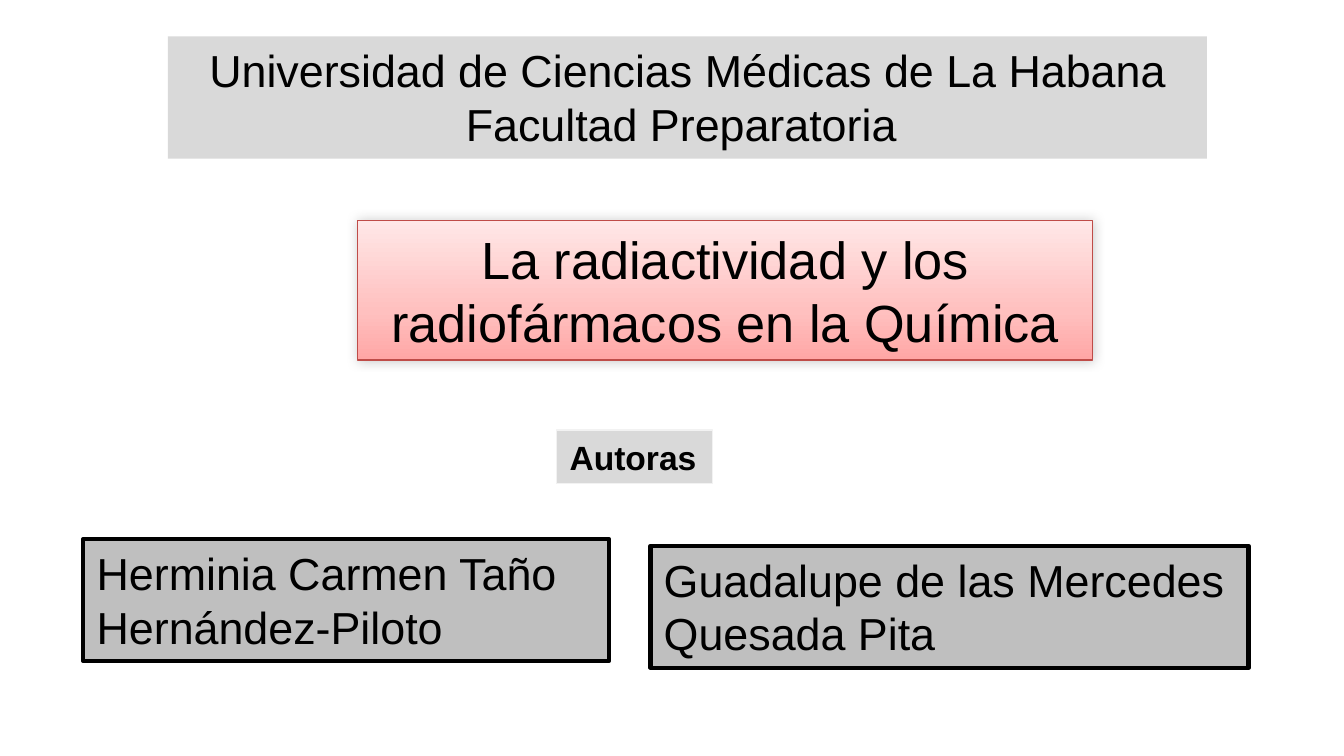
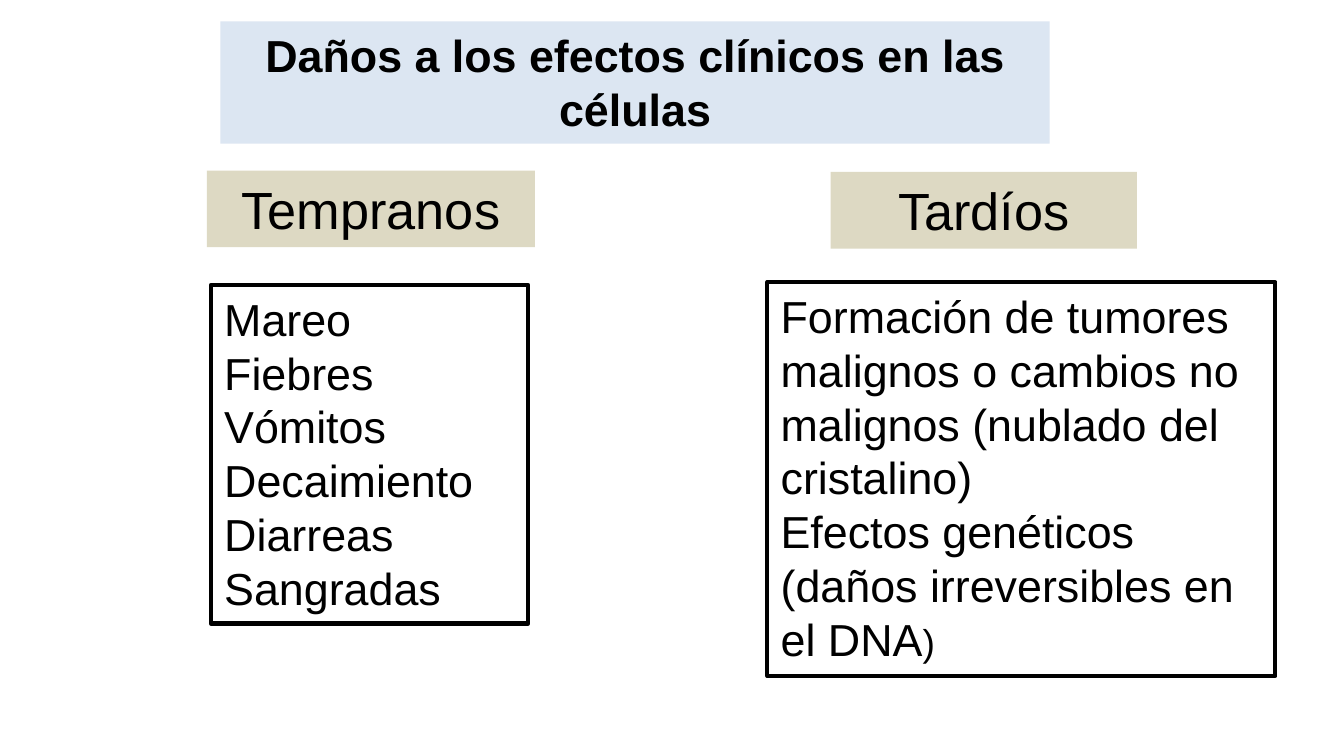
from copy import deepcopy

from lxml.etree import SubElement
from pptx import Presentation
from pptx.dml.color import RGBColor
from pptx.enum.shapes import MSO_SHAPE as Shape
from pptx.enum.text import MSO_ANCHOR as Anchor, MSO_AUTO_SIZE as AutoSize, PP_ALIGN as Align
from pptx.oxml.ns import qn
from pptx.util import Inches, Pt

FONT = "Arial"
BLACK = RGBColor(0x00, 0x00, 0x00)
SILVER = RGBColor(0xBF, 0xBF, 0xBF)
LIGHT_GREY = RGBColor(0xD9, 0xD9, 0xD9)
PALE_GREY = RGBColor(0xF2, 0xF2, 0xF2)
PALE_BLUE = RGBColor(0xDC, 0xE6, 0xF2)
SAND = RGBColor(0xDD, 0xD9, 0xC3)
RED = RGBColor(0xBF, 0x4C, 0x48)
PINK_STOPS = [
    (0, RGBColor(0xFF, 0xA6, 0xA5)),
    (0.35, RGBColor(0xFF, 0xC0, 0xBF)),
    (1, RGBColor(0xFF, 0xE7, 0xE7)),
]
FRAME = (BLACK, 2.25)


def add_panel(page, box, paragraphs, size=24, fill=None, line=None,
              align=Align.LEFT, bold=False, wrap=True):
    """Draw a rectangle in the box; each paragraph is a list of (text, size) runs or a string."""
    panel = page.shapes.add_shape(Shape.RECTANGLE, *map(Inches, box))
    panel.shadow.inherit = False
    if fill is None:
        panel.fill.background()
    else:
        panel.fill.solid()
        panel.fill.fore_color.rgb = fill
    if line is None:
        panel.line.fill.background()
    else:
        panel.line.color.rgb, panel.line.width = line[0], Pt(line[1])
    frame = panel.text_frame
    frame.word_wrap = wrap
    frame.auto_size = AutoSize.SHAPE_TO_FIT_TEXT
    frame.vertical_anchor = Anchor.TOP
    for index, runs in enumerate(paragraphs):
        para = frame.add_paragraph() if index else frame.paragraphs[0]
        para.alignment = align
        for text, points in [(runs, size)] if isinstance(runs, str) else runs:
            span = para.add_run()
            span.text = text
            span.font.name, span.font.size = FONT, Pt(points)
            span.font.bold, span.font.color.rgb = bold, BLACK
    return panel


def add_banner(page, box, paragraphs, fill, size=24, bold=False):
    """Draw a centred, unframed heading band."""
    add_panel(page, box, paragraphs, size, fill, align=Align.CENTER, bold=bold)


def add_topic(page, box, title):
    """Draw the talk title on a pink gradient with a soft shadow."""
    topic = add_panel(page, box, [title], 28, line=(RED, 0.75), align=Align.CENTER)
    topic.fill.gradient()
    properties = topic.element.spPr
    stop_list = properties.find(".//" + qn("a:gsLst"))
    stop_list.append(deepcopy(stop_list[-1]))
    for stop, (position, color) in zip(topic.fill.gradient_stops, PINK_STOPS):
        stop.position, stop.color.rgb = position, color
    topic.fill.gradient_angle = 90
    shadow = SubElement(properties.find(qn("a:effectLst")), qn("a:outerShdw"),
                        blurRad=str(Pt(6)), dist="0", dir="18900000", rotWithShape="0")
    color = SubElement(shadow, qn("a:srgbClr"), val=str(BLACK))
    SubElement(color, qn("a:alpha"), val="20000")


def add_effects(page, heading_box, list_box, heading, effects):
    """Draw a sand heading and the framed list of effects below it."""
    add_banner(page, heading_box, [heading], SAND, 28)
    add_panel(page, list_box, effects, line=FRAME)


def build_cover(page):
    """Build the cover with institution, title and authors."""
    def add_author(box, author):
        """Draw one framed author name."""
        add_panel(page, box, [author], fill=SILVER, line=FRAME)

    add_author((0.62, 4.01, 3.91, 0.91), "Herminia Carmen Taño Hernández-Piloto")
    add_banner(page, (1.25, 0.27, 7.73, 0.91),
               ["Universidad de Ciencias Médicas de La Habana", "Facultad Preparatoria "],
               LIGHT_GREY)
    add_topic(page, (2.66, 1.64, 5.47, 1.04),
              "La radiactividad y los radiofármacos en la Química")
    add_panel(page, (4.14, 3.2, 1.16, 0.4), ["Autoras"], 18, LIGHT_GREY,
              (PALE_GREY, 0.75), bold=True, wrap=False)
    add_author((4.84, 4.06, 4.45, 0.91), "Guadalupe de las Mercedes Quesada Pita")


def build_damage(page):
    """Build the comparison of early and late damage."""
    add_banner(page, (1.64, 0.16, 6.17, 0.91),
               ["Daños a los efectos clínicos en las células"], PALE_BLUE, bold=True)
    add_effects(page, (1.54, 1.27, 2.44, 0.57), (1.57, 2.12, 2.36, 2.52), "Tempranos",
                ["Mareo", "Fiebres", "Vómitos", "Decaimiento", "Diarreas", "Sangradas"])
    add_effects(page, (6.18, 1.28, 2.28, 0.57), (5.71, 2.1, 3.78, 2.93), "Tardíos",
                ["Formación de tumores malignos o cambios no malignos (nublado del cristalino)",
                 [("Efectos genéticos (daños irreversibles en el DNA", 24), (")", 20)]])


def main():
    """Build and save the deck."""
    deck = Presentation()
    deck.slide_width = Inches(10)
    deck.slide_height = deck.slide_width * 9 // 16
    for build in (build_cover, build_damage):
        build(deck.slides.add_slide(deck.slide_layouts[6]))
    deck.save("out.pptx")


if __name__ == "__main__":
    main()
